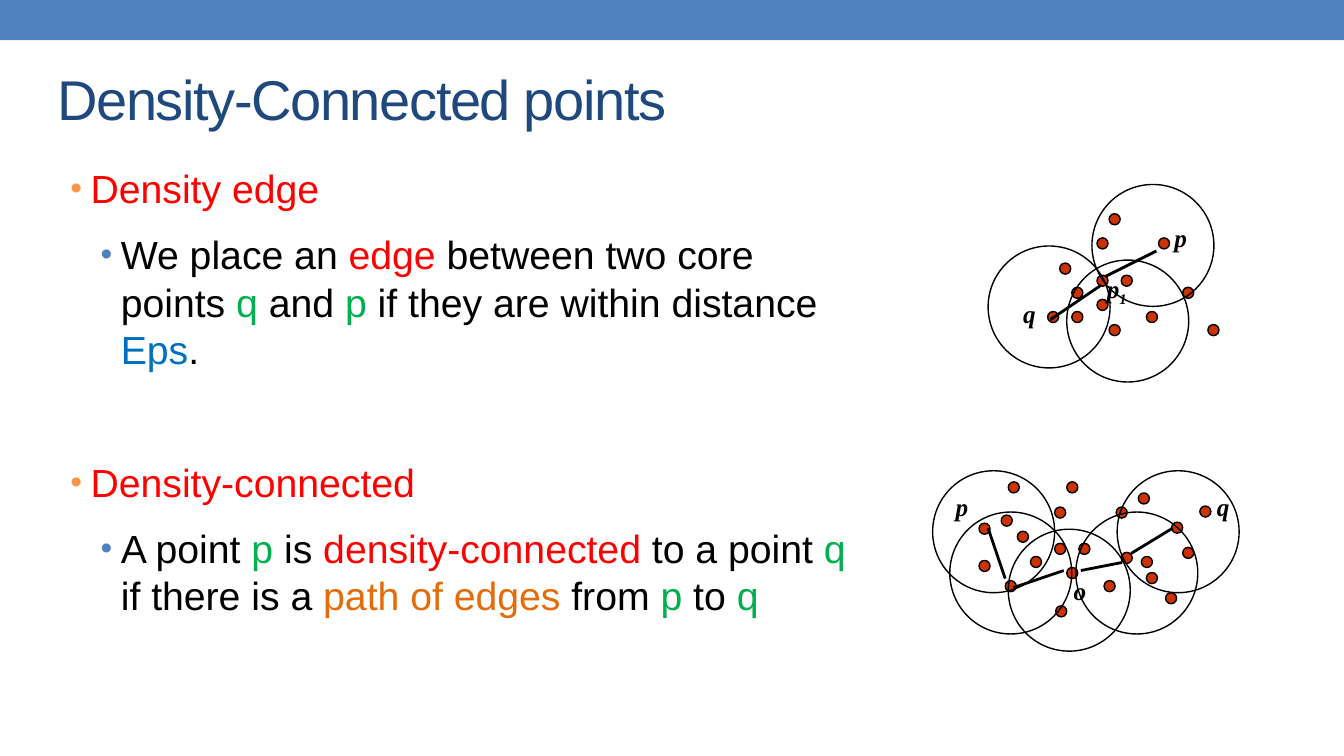
import pptx
import pptx.dml.color
import pptx.enum.shapes
import pptx.enum.text
import pptx.util
from lxml import etree
from pptx.oxml.ns import qn

Inches, Pt = pptx.util.Inches, pptx.util.Pt

BLACK, RED, GREEN, BLUE, ORANGE = "000000", "FF0000", "00B050", "0070C0", "E46C0A"
BANNER, TITLE, DOT = "4F81BD", "1F497D", "CC3300"
DOT_SIZE, CIRCLE_SIZE = 0.11, 1.21
BODY_SIZE, LABEL_SIZE = 28, 18
LINE_PITCH, PARA_GAP = 33.6, 14
BULLETS = [("F79646", 0.2), (BANNER, 0.5)]  # colour and indent of each level

# level, space before in points, runs
BODY = [
    (0, 0, [("Density edge", RED)]),
    (1, PARA_GAP, [("We place an ", BLACK), ("edge", RED), (" between two core points ", BLACK),
                   ("q", GREEN), (" and ", BLACK), ("p", GREEN),
                   (" if they are within distance ", BLACK), ("Eps", BLUE), (".", BLACK)]),
    (0, 2 * PARA_GAP + LINE_PITCH, [("Density-connected", RED)]),
    (1, PARA_GAP, [("A point ", BLACK), ("p", GREEN), (" is ", BLACK),
                   ("density-connected", RED), (" to a point ", BLACK), ("q ", GREEN),
                   ("if there is a ", BLACK), ("path of edges ", ORANGE), ("from ", BLACK),
                   ("p", GREEN), (" to ", BLACK), ("q", GREEN)]),
]

# dots and circles: left, top; edges: start, end; labels: text, subscript, left, top, width
EDGE_DIAGRAM = {
    "dots": [(10.51, 2.61), (10.88, 2.73), (10.88, 2.36), (10.39, 3.09), (10.63, 2.85),
             (10.63, 3.09), (11, 3.22), (11, 2.12), (11.73, 2.85), (11.49, 2.36),
             (10.88, 2.97), (11.12, 2.73), (11.37, 3.09), (11.98, 3.22)],
    "circles": [(10.58, 2.58), (9.8, 2.44), (10.83, 1.83)],
    "edges": [((11.47, 2.49), (10.97, 2.74)), ((10.42, 3.17), (10.92, 2.83))],
    "labels": [("p", "", 11.55, 2.16, 0.42), ("q", "", 10.05, 2.91, 0.42),
               ("p", "1", 10.88, 2.66, 0.67)],
}
PATH_DIAGRAM = {
    "dots": [(10.09, 5.27), (10.46, 5.39), (10.46, 5.03), (9.97, 5.76), (10.22, 5.52),
             (10.47, 6.01), (10.58, 5.63), (10.58, 4.78), (11.32, 5.52), (11.07, 5.03),
             (9.71, 5.56), (10.7, 5.39), (10.95, 5.76), (11.56, 5.88), (11.73, 5.43),
             (11.12, 5.48), (11.37, 5.68), (11.9, 5.02), (11.29, 4.89), (11.62, 5.18),
             (9.93, 5.11), (9.71, 5.19), (10, 4.78)],
    "circles": [(9.42, 5.08), (10, 5.25), (10.67, 5.08), (11.08, 4.67), (9.25, 4.67)],
    "edges": [((10.05, 5.83), (10.55, 5.66)), ((11.13, 5.58), (10.72, 5.66)),
              ((9.8, 5.24), (9.97, 5.74)), ((11.63, 5.24), (11.22, 5.49))],
    "labels": [("p", "", 9.38, 4.83, 0.42), ("q", "", 11.97, 4.83, 0.42),
               ("o", "", 10.55, 5.66, 0.42)],
}


def paint(color_format, color):
    color_format.rgb = pptx.dml.color.RGBColor.from_string(color)


def add_shape(slide, kind, left, top, width, height, fill=None, line=None):
    shape = slide.shapes.add_shape(kind, Inches(left), Inches(top), Inches(width), Inches(height))
    shape.shadow.inherit = False
    if fill:
        shape.fill.solid()
        paint(shape.fill.fore_color, fill)
    else:
        shape.fill.background()
    if line:
        paint(shape.line.color, line)
        shape.line.width = Pt(1)
    else:
        shape.line.fill.background()


def add_circle(slide, left, top, size, fill=None):
    add_shape(slide, pptx.enum.shapes.MSO_SHAPE.OVAL, left, top, size, size, fill, BLACK)


def add_edge(slide, start, end):
    edge = slide.shapes.add_connector(pptx.enum.shapes.MSO_CONNECTOR.STRAIGHT,
                                      *(Inches(value) for value in start + end))
    paint(edge.line.color, BLACK)
    edge.line.width = Pt(2)
    etree.SubElement(edge._element.spPr, qn("a:effectLst"))


def add_text_frame(slide, left, top, width, height):
    box = slide.shapes.add_textbox(Inches(left), Inches(top), Inches(width), Inches(height))
    box.text_frame.word_wrap = True
    return box.text_frame


def add_run(para, text, size, color, font="Arial"):
    span = para.add_run()
    span.text = text
    span.font.size = Pt(size)
    span.font.name = font
    paint(span.font.color, color)
    return span


def add_label(slide, text, subscript, left, top, width):
    para = add_text_frame(slide, left, top, width, 0.4).paragraphs[0]
    for part, baseline in ((text, None), (subscript, "-25000")):
        if part:
            span = add_run(para, part, LABEL_SIZE, BLACK, "Times New Roman")
            span.font.bold = span.font.italic = True
            if baseline:
                span._r.get_or_add_rPr().set("baseline", baseline)


def set_bullet(para, color, indent):
    props = para._p.get_or_add_pPr()
    props.set("marL", str(Inches(indent)))
    props.set("indent", str(Inches(-0.2)))
    bullet_color = etree.SubElement(props, qn("a:buClr"))
    etree.SubElement(bullet_color, qn("a:srgbClr"), val=color)
    etree.SubElement(props, qn("a:buSzPct"), val="85000")
    etree.SubElement(props, qn("a:buFont"), typeface="Arial")
    etree.SubElement(props, qn("a:buChar"), char="•")


def add_title(slide):
    frame = add_text_frame(slide, 0.47, 0.51, 9.22, 0.92)
    frame.vertical_anchor = pptx.enum.text.MSO_ANCHOR.MIDDLE
    span = add_run(frame.paragraphs[0], "Density-Connected points", 40, TITLE)
    span._r.get_or_add_rPr().set("spc", "-100")


def add_body(slide):
    frame = add_text_frame(slide, 0.6, 1.58, 8.01, 5.5)
    for index, (level, gap, runs) in enumerate(BODY):
        para = frame.add_paragraph() if index else frame.paragraphs[0]
        para.level = level
        para.line_spacing = Pt(LINE_PITCH)
        para.space_before = Pt(gap)
        set_bullet(para, *BULLETS[level])
        for text, color in runs:
            add_run(para, text, BODY_SIZE, color)


def add_diagram(slide, diagram):
    for left, top in diagram["dots"]:
        add_circle(slide, left, top, DOT_SIZE, DOT)
    for left, top in diagram["circles"]:
        add_circle(slide, left, top, CIRCLE_SIZE)
    for start, end in diagram["edges"]:
        add_edge(slide, start, end)
    for label in diagram["labels"]:
        add_label(slide, *label)


def main():
    deck = pptx.Presentation()
    deck.slide_width, deck.slide_height = Inches(13.33), Inches(7.5)
    page = deck.slides.add_slide(deck.slide_layouts[6])
    add_shape(page, pptx.enum.shapes.MSO_SHAPE.RECTANGLE, 0, 0, 13.33, 0.4, BANNER)
    add_title(page)
    add_body(page)
    for diagram in (EDGE_DIAGRAM, PATH_DIAGRAM):
        add_diagram(page, diagram)
    deck.save("out.pptx")


if __name__ == "__main__":
    main()
